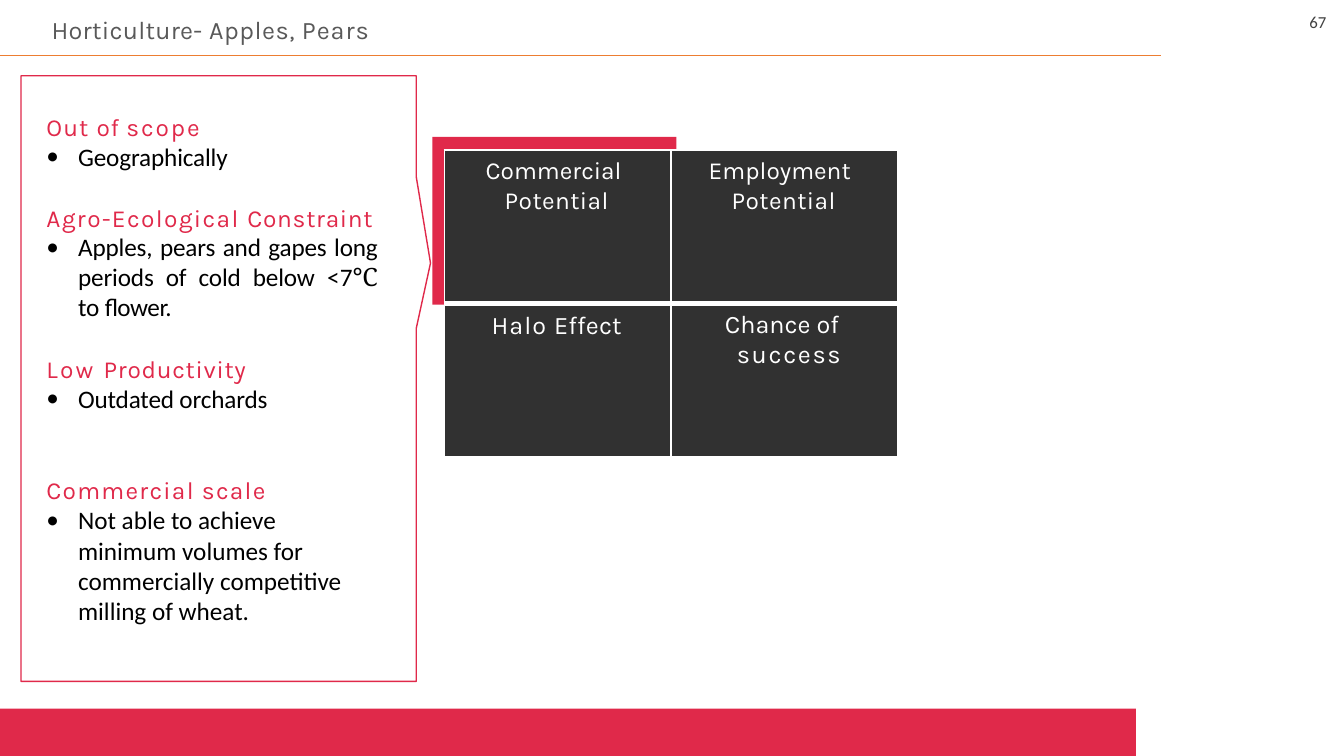
from lxml import etree
from pptx import Presentation
from pptx.dml.color import RGBColor
from pptx.enum.shapes import MSO_CONNECTOR, MSO_SHAPE
from pptx.enum.text import MSO_ANCHOR, MSO_AUTO_SIZE, PP_ALIGN
from pptx.oxml.ns import qn
from pptx.util import Cm, Pt

RED = RGBColor(0xE0, 0x29, 0x4A)
ORANGE = RGBColor(0xED, 0x7D, 0x31)
CHARCOAL = RGBColor(0x31, 0x31, 0x31)
GREY = RGBColor(0x59, 0x59, 0x59)
DARK_GREY = RGBColor(0x40, 0x40, 0x40)
BLACK = RGBColor(0, 0, 0)
WHITE = RGBColor(0xFF, 0xFF, 0xFF)
HEADING_FONT, BODY_FONT = "Karla", "Calibri"
RECTANGLE, STRAIGHT = MSO_SHAPE.RECTANGLE, MSO_CONNECTOR.STRAIGHT
LEFT, JUSTIFY = PP_ALIGN.LEFT, PP_ALIGN.JUSTIFY
TOP, NO_FIT = MSO_ANCHOR.TOP, MSO_AUTO_SIZE.NONE
TITLE_ONLY = 5


class SlideBuilder:
    def __init__(self, deck):
        self.page = deck.slides.add_slide(deck.slide_layouts[TITLE_ONLY])
        self.shapes = self.page.shapes

    def rectangle(self, left, top, width, height, color):
        shape = self.shapes.add_shape(RECTANGLE, Cm(left), Cm(top), Cm(width), Cm(height))
        shape.shadow.inherit = False
        shape.fill.solid()
        shape.fill.fore_color.rgb = color
        shape.line.fill.background()

    def rule(self, left, right, y, color, width):
        line = self.shapes.add_connector(STRAIGHT, Cm(left), Cm(y), Cm(right), Cm(y))
        line.line.color.rgb = color
        line.line.width = Pt(width)
        etree.SubElement(line._element.spPr, qn("a:effectLst"))

    def outline(self, points, color, width):
        corners = [(Cm(x), Cm(y)) for x, y in points]
        builder = self.shapes.build_freeform(*corners[0], scale=1.0)
        builder.add_line_segments(corners[1:], close=True)
        shape = builder.convert_to_shape()
        shape.shadow.inherit = False
        shape.fill.background()
        shape.line.color.rgb = color
        shape.line.width = Pt(width)

    def paragraph(self, para, spans, font, size, color, left=0.0, first=0.0,
                  bullet=False, align=LEFT, before=0, spacing=None):
        """Fill a paragraph; each span is (text, tracking in points[, font])."""
        para.alignment = align
        para.space_before = Pt(before)
        if spacing:
            para.line_spacing = spacing
        properties = para._p.get_or_add_pPr()
        properties.set("marL", str(Cm(left)))
        properties.set("indent", str(Cm(first)))
        if bullet:
            etree.SubElement(properties, qn("a:buFont"), typeface=font)
            etree.SubElement(properties, qn("a:buChar"), char="•")
        else:
            etree.SubElement(properties, qn("a:buNone"))
        para.font.name = font
        para.font.size = Pt(size)
        para.font.color.rgb = color
        for text, tracking, *other_font in spans:
            span = para.add_run()
            span.text = text
            span._r.get_or_add_rPr().set("spc", str(round(tracking * 100)))
            if other_font:
                span.font.name = other_font[0]

    def frame(self, box, left, top, width, height, inset):
        box.left, box.top, box.width, box.height = Cm(left), Cm(top), Cm(width), Cm(height)
        frame = box.text_frame
        frame.word_wrap = True
        frame.auto_size = NO_FIT
        frame.vertical_anchor = TOP
        frame.margin_left = frame.margin_right = frame.margin_bottom = 0
        frame.margin_top = Cm(inset)
        return frame

    def title(self, spans, place):
        frame = self.frame(self.shapes.title, *place, inset=0.06)
        self.paragraph(frame.paragraphs[0], spans, HEADING_FONT, 18, GREY, left=0.03)

    def text(self, paragraphs, place, inset):
        box = self.shapes.add_textbox(0, 0, 0, 0)
        frame = self.frame(box, *place, inset=inset)
        for index, style in enumerate(paragraphs):
            para = frame.add_paragraph() if index else frame.paragraphs[0]
            self.paragraph(para, **style)

    def border(self, cell, side, width):
        line = etree.SubElement(cell._tc.get_or_add_tcPr(), qn(f"a:{side}"), w=str(Pt(width)))
        fill = etree.SubElement(line, qn("a:solidFill"))
        etree.SubElement(fill, qn("a:srgbClr"), val=str(WHITE))

    def matrix(self, rows, left, top, column_width, row_height):
        count = len(rows[0])
        table = self.shapes.add_table(
            len(rows), count, Cm(left), Cm(top),
            Cm(column_width * count), Cm(row_height * len(rows))).table
        for column in table.columns:
            column.width = Cm(column_width)
        for r, row in enumerate(rows):
            table.rows[r].height = Cm(row_height)
            for c, (spans, size, indent, first, spacing, inset) in enumerate(row):
                cell = table.cell(r, c)
                cell.margin_left = cell.margin_right = cell.margin_bottom = 0
                cell.margin_top = Cm(inset)
                cell.vertical_anchor = TOP
                for side in ("lnL", "lnR", "lnT", "lnB"):
                    inner = side == ("lnT" if r else "lnB")
                    self.border(cell, side, 4.25 if inner else 1.5)
                cell.fill.solid()
                cell.fill.fore_color.rgb = CHARCOAL
                self.paragraph(cell.text_frame.paragraphs[0], spans, HEADING_FONT, size,
                               WHITE, left=indent, first=first, spacing=spacing)


def heading(*spans, before=0, spacing=Pt(20.9)):
    return dict(spans=spans, font=HEADING_FONT, size=17.5, color=RED,
                left=0.03, before=before, spacing=spacing)


def bullet(*spans, **style):
    return dict(spans=spans, font=BODY_FONT, size=18, color=BLACK,
                left=0.83, first=-0.8, bullet=True, **style)


CONSTRAINTS = [
    heading(("Out ", 0.8), ("of ", 0.5), ("scope", 1.4)),
    bullet(("Geographically", -0.1), spacing=Pt(21.4)),
    heading(("Agro-Ecological ", 1), ("Constraint", 0.5), before=22.6),
    bullet(("Apples, pears and gapes long periods of cold below ", -0.1), ("<7", 0),
           ("℃ ", 0, "Cambria"), ("to ", -0.2), ("flower.", -0.3),
           align=JUSTIFY, spacing=0.99),
    heading(("Low ", 1.6), ("Productivity", 0.5), before=22.6),
    bullet(("Outdated orchards", -0.1), spacing=Pt(21.6)),
    heading(("Commercial scale", 0.9), before=43.8, spacing=None),
    bullet(("Not able to achieve minimum volumes for commercially competitive "
            "milling of wheat.", 0), before=0.6),
]

# Cell: spans, size, indent, first line, line spacing, top margin
CRITERIA = [
    [([("Commercial ", 0), ("Potential", 0.3)], 17.5, 1.52, -0.48, 1.04, 0.15),
     ([("Employment ", 0), ("Potential", 0.3)], 17.5, 1.52, -0.58, 1.04, 0.15)],
    [([("Halo ", 0.7), ("Effect", 0.1)], 18, 1.19, 0, None, 0.19),
     ([("Chance of ", 0), ("success", 1.2)], 18, 1.65, -0.3, 1.01, 0.16)],
]
# Panel outline with a pointer on its right side
PANEL = [(0.53, 1.91), (10.49, 1.91), (10.49, 4.45), (10.85, 6.63),
         (10.49, 8.28), (10.49, 17.17), (0.53, 17.17)]


def main():
    deck = Presentation()
    deck.slide_width, deck.slide_height = Cm(33.87), Cm(19.05)
    slide = SlideBuilder(deck)

    # Footer band, header and page number
    slide.rectangle(0, 17.86, 28.63, 1.19, RED)
    slide.rule(0, 29.26, 1.4, ORANGE, 0.5)
    slide.title([("Horticulture- ", 0.2), ("Apples, ", 0.4), ("Pears", 0.7)],
                (1.27, 0.3, 8.4, 0.84))
    slide.text([dict(spans=[("67", 0)], font=BODY_FONT, size=12, color=DARK_GREY, left=0.03)],
               (32.97, 0.23, 0.6, 0.58), inset=0.06)

    # Constraints panel
    slide.outline(PANEL, RED, 1)
    slide.text(CONSTRAINTS, (1.14, 2.74, 8.38, 12.27), inset=0.09)

    # Criteria matrix with the first cell highlighted
    slide.rectangle(10.9, 3.45, 6.15, 4.23, RED)
    slide.matrix(CRITERIA, 11.2, 3.78, 5.72, 3.87)

    deck.save("out.pptx")


if __name__ == "__main__":
    main()
